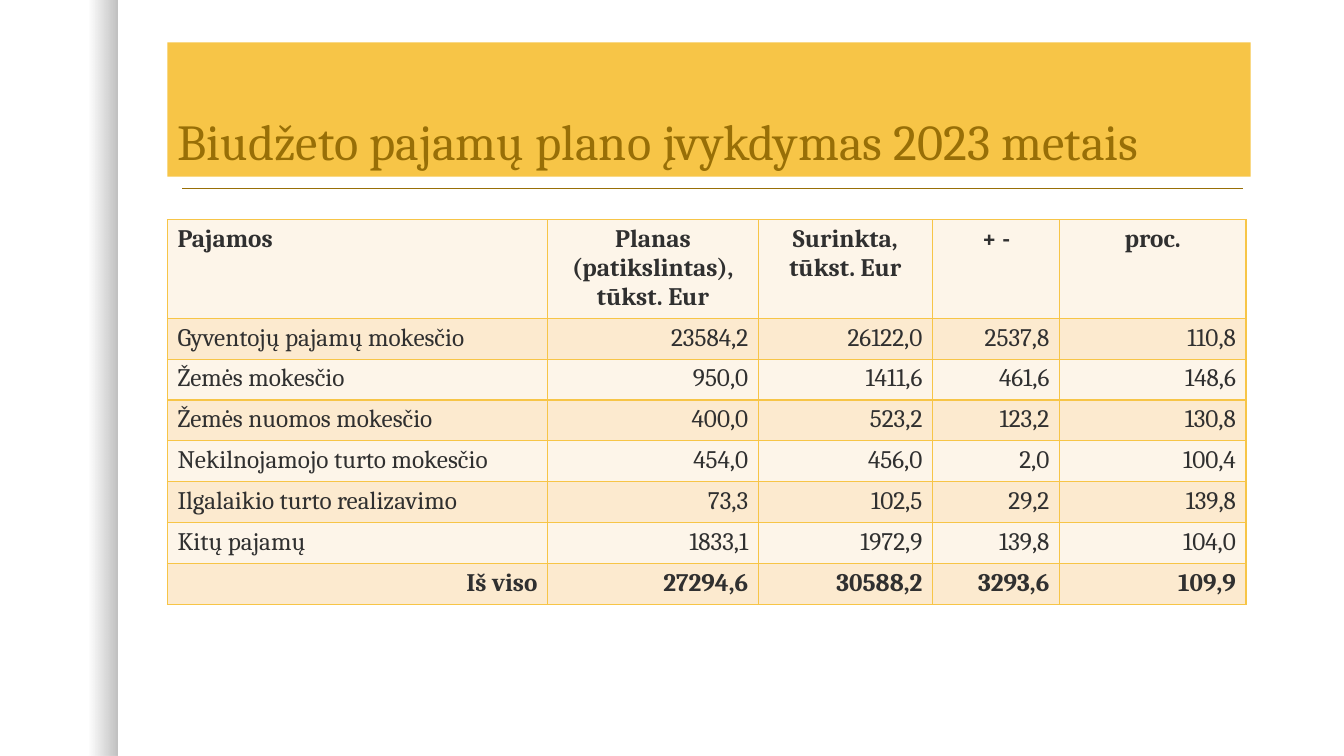
from lxml import etree
from pptx import Presentation
from pptx.dml.color import RGBColor
from pptx.enum import shapes, text
from pptx.oxml import ns
from pptx.util import Cm, Pt

FONT = "Cambria"
GOLD, BROWN, INK = "F7C547", "986F07", "303030"
LIGHT_ROW, DARK_ROW = "FDF5E9", "FCEACF"
LEFT = 4.22
COLUMN_WIDTHS = [9.58, 5.31, 4.39, 3.2, 4.7]
HEADER_HEIGHT, ROW_HEIGHT = 2.48, 1.03
INCOME = [
    ["Pajamos", "Planas (patikslintas), tūkst. Eur", "Surinkta, tūkst. Eur", "+ -", "proc."],
    ["Gyventojų pajamų mokesčio", "23584,2", "26122,0", "2537,8", "110,8"],
    ["Žemės mokesčio", "950,0", "1411,6", "461,6", "148,6"],
    ["Žemės nuomos mokesčio", "400,0", "523,2", "123,2", "130,8"],
    ["Nekilnojamojo turto mokesčio", "454,0", "456,0", "2,0", "100,4"],
    ["Ilgalaikio turto realizavimo", "73,3", "102,5", "29,2", "139,8"],
    ["Kitų pajamų", "1833,1", "1972,9", "139,8", "104,0"],
    ["Iš viso", "27294,6", "30588,2", "3293,6", "109,9"],
]


def colour(value):
    return RGBColor.from_string(value)


def add_child(parent, tag, **attributes):
    return etree.SubElement(parent, ns.qn(tag), attributes)


def format_runs(para, size, hue, bold=False):
    for span in para.runs:
        span.font.name = FONT
        span.font.size = Pt(size)
        span.font.bold = bold
        span.font.color.rgb = colour(hue)


def add_edge_shade(page, height):
    """Add the left band that fades from clear to a soft grey edge."""
    band = page.shapes.add_shape(shapes.MSO_SHAPE.RECTANGLE, 0, 0, Cm(2.95), height)
    band.shadow.inherit = False
    band.line.fill.background()
    band.fill.gradient()
    band.fill.gradient_angle = 0
    for stop, position, opacity in zip(band.fill.gradient_stops, (0.75, 1), (0, 25)):
        stop.position = position
        stop.color.rgb = colour("000000")
    for tone, opacity in zip(band.fill._xPr.iter(ns.qn("a:srgbClr")), (0, 25)):
        add_child(tone, "a:alpha", val=str(opacity * 1000))


def add_rule(page):
    rule = page.shapes.add_connector(
        shapes.MSO_CONNECTOR.STRAIGHT, Cm(4.6), Cm(4.75), Cm(31.32), Cm(4.75))
    rule.line.color.rgb = colour(BROWN)
    rule.line.width = Pt(1)
    add_child(rule._element.spPr, "a:effectLst")


def set_title(page, wording):
    title = page.shapes.title
    title.left, title.top, title.width, title.height = Cm(LEFT), Cm(1.07), Cm(27.3), Cm(3.38)
    title.fill.solid()
    title.fill.fore_color.rgb = colour(GOLD)
    frame = title.text_frame
    frame.text = wording
    frame.word_wrap = True
    frame.auto_size = text.MSO_AUTO_SIZE.NONE
    frame.vertical_anchor = text.MSO_ANCHOR.BOTTOM
    para = frame.paragraphs[0]
    para.alignment = text.PP_ALIGN.LEFT
    para.line_spacing = 0.9
    format_runs(para, 36, BROWN)


def set_borders(cell):
    properties = cell._tc.get_or_add_tcPr()
    for position, side in enumerate(("a:lnL", "a:lnR", "a:lnT", "a:lnB")):
        border = etree.Element(ns.qn(side), w=str(Pt(1)))
        add_child(add_child(border, "a:solidFill"), "a:srgbClr", val=GOLD)
        properties.insert(position, border)


def cell_alignment(row, column):
    if row == 0:
        return text.PP_ALIGN.CENTER if column else text.PP_ALIGN.LEFT
    is_label = column == 0 and row < len(INCOME) - 1
    return text.PP_ALIGN.LEFT if is_label else text.PP_ALIGN.RIGHT


def add_income_table(page):
    heights = [HEADER_HEIGHT] + [ROW_HEIGHT] * (len(INCOME) - 1)
    table = page.shapes.add_table(
        len(INCOME), len(COLUMN_WIDTHS), Cm(LEFT), Cm(5.54),
        Cm(sum(COLUMN_WIDTHS)), Cm(sum(heights))).table
    for column, width in zip(table.columns, COLUMN_WIDTHS):
        column.width = Cm(width)
    for row, (height, values) in enumerate(zip(heights, INCOME)):
        table.rows[row].height = Cm(height)
        for column, value in enumerate(values):
            cell = table.cell(row, column)
            cell.text_frame.text = value
            cell.fill.solid()
            cell.fill.fore_color.rgb = colour(DARK_ROW if row % 2 else LIGHT_ROW)
            set_borders(cell)
            para = cell.text_frame.paragraphs[0]
            para.alignment = cell_alignment(row, column)
            format_runs(para, 18, INK, bold=row in (0, len(INCOME) - 1))


def main():
    deck = Presentation()
    deck.slide_width, deck.slide_height = Cm(33.87), Cm(19.05)
    page = deck.slides.add_slide(deck.slide_layouts.get_by_name("Title Only"))
    add_edge_shade(page, deck.slide_height)
    add_rule(page)
    set_title(page, "Biudžeto pajamų plano įvykdymas 2023 metais")
    add_income_table(page)
    deck.save("out.pptx")


if __name__ == "__main__":
    main()
